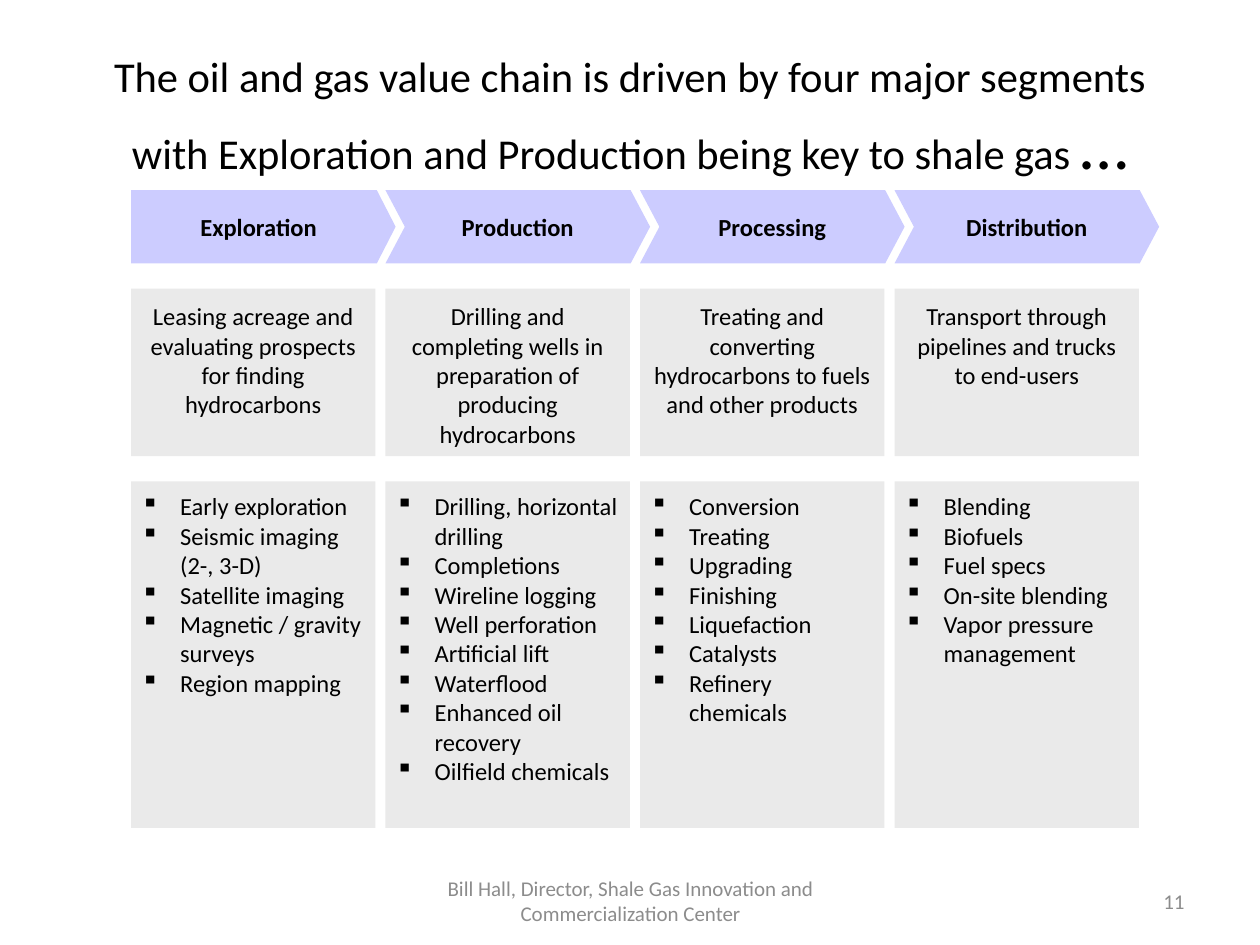
from lxml import etree
from pptx import Presentation
from pptx.dml.color import RGBColor
from pptx.enum import shapes, text
from pptx.oxml import ns
from pptx.util import Inches, Pt

COLORS = {"text": "000000", "step": "CCCCFF", "panel": "EAEAEA", "foot": "8C8C8C"}
FONT = "Calibri"
LEFT, STEP, WIDTH = 1.04, 2.02, 1.94
ALIGN, ANCHOR = text.PP_ALIGN, text.MSO_ANCHOR

SEGMENTS = [
    ("Exploration",
     "Leasing acreage and evaluating prospects for finding hydrocarbons",
     ["Early exploration", "Seismic imaging (2-, 3-D)", "Satellite imaging",
      "Magnetic / gravity surveys", "Region mapping"]),
    ("Production",
     "Drilling and completing wells in preparation of producing hydrocarbons",
     ["Drilling, horizontal drilling", "Completions", "Wireline logging",
      "Well perforation", "Artificial lift", "Waterflood",
      "Enhanced oil recovery", "Oilfield chemicals"]),
    ("Processing",
     "Treating and converting hydrocarbons to fuels and other products",
     ["Conversion", "Treating", "Upgrading", "Finishing", "Liquefaction",
      "Catalysts", "Refinery chemicals"]),
    ("Distribution",
     "Transport through pipelines and trucks to end-users",
     ["Blending", "Biofuels", "Fuel specs", "On-site blending",
      "Vapor pressure management"]),
]


def rgb(name):
    return RGBColor.from_string(COLORS[name])


def set_font(font, size, color="text", bold=False):
    font.name, font.size, font.bold = FONT, Pt(size), bold
    font.color.rgb = rgb(color)


def set_frame(frame, anchor, inset):
    frame.word_wrap = True
    frame.vertical_anchor = anchor
    frame.margin_left = frame.margin_right = Inches(inset)
    frame.margin_top = frame.margin_bottom = Inches(inset)


def add_bullet(para):
    props = para._p.get_or_add_pPr()
    props.set("marL", str(Inches(0.31)))
    props.set("indent", str(-Inches(0.31)))
    tint = etree.SubElement(props, ns.qn("a:buClr"))
    etree.SubElement(tint, ns.qn("a:srgbClr"), val=COLORS["text"])
    etree.SubElement(props, ns.qn("a:buChar"), char="▪")


def add_block(slide, kind, box, fill, lines, inset, anchor=ANCHOR.TOP,
              bold=False, bullets=False):
    shape = slide.shapes.add_shape(kind, *map(Inches, box))
    shape.shadow.inherit = False
    shape.fill.solid()
    shape.fill.fore_color.rgb = rgb(fill)
    shape.line.fill.background()
    frame = shape.text_frame
    set_frame(frame, anchor, inset)
    for i, line in enumerate(lines):
        para = frame.paragraphs[0] if i == 0 else frame.add_paragraph()
        para.text = line
        para.alignment = ALIGN.LEFT if bullets else ALIGN.CENTER
        if bullets:
            add_bullet(para)
        set_font(para.font, 14, bold=bold)
    return shape


def add_label(slide, box, words, size, align, color="text"):
    frame = slide.shapes.add_textbox(*map(Inches, box)).text_frame
    set_frame(frame, ANCHOR.MIDDLE, 0.1)
    frame.margin_top = frame.margin_bottom = Inches(0.05)
    para = frame.paragraphs[0]
    para.text = words
    para.alignment = align
    set_font(para.font, size, color)
    return para


def add_title(slide):
    para = add_label(
        slide, (0.5, 0.3, 9, 1.25),
        "The oil and gas value chain is driven by four major segments "
        "with Exploration and Production being key to shale gas ",
        24.3, ALIGN.CENTER)
    dots = para.add_run()
    dots.text = "…"
    dots.font.size = Pt(39.6)


def add_segment(slide, index, name, about, items):
    kinds = shapes.MSO_SHAPE
    left = LEFT + index * STEP
    # Arrow heading
    kind, tip = (kinds.CHEVRON, 0.265) if index else (kinds.PENTAGON, 0.256)
    arrow = add_block(slide, kind, (left, 1.51, 2.1, 0.58), "step", [name],
                      0.05, ANCHOR.MIDDLE, bold=True)
    arrow.adjustments[0] = tip
    # Description and list of services
    add_block(slide, kinds.RECTANGLE, (left, 2.29, WIDTH, 1.33), "panel",
              [about], 0.1)
    add_block(slide, kinds.RECTANGLE, (left, 3.82, WIDTH, 2.75), "panel",
              items, 0.08, bullets=True)


def main():
    deck = Presentation()
    deck.slide_width, deck.slide_height = Inches(10), Inches(7.5)
    slide = deck.slides.add_slide(deck.slide_layouts[6])

    add_title(slide)
    for index, segment in enumerate(SEGMENTS):
        add_segment(slide, index, *segment)

    # Footer and page number
    add_label(slide, (3.42, 6.95, 3.17, 0.4),
              "Bill Hall, Director, Shale Gas Innovation and "
              "Commercialization Center", 12, ALIGN.CENTER, "foot")
    add_label(slide, (7.17, 6.95, 2.33, 0.4), "11", 12, ALIGN.RIGHT, "foot")

    deck.save("out.pptx")


if __name__ == "__main__":
    main()
